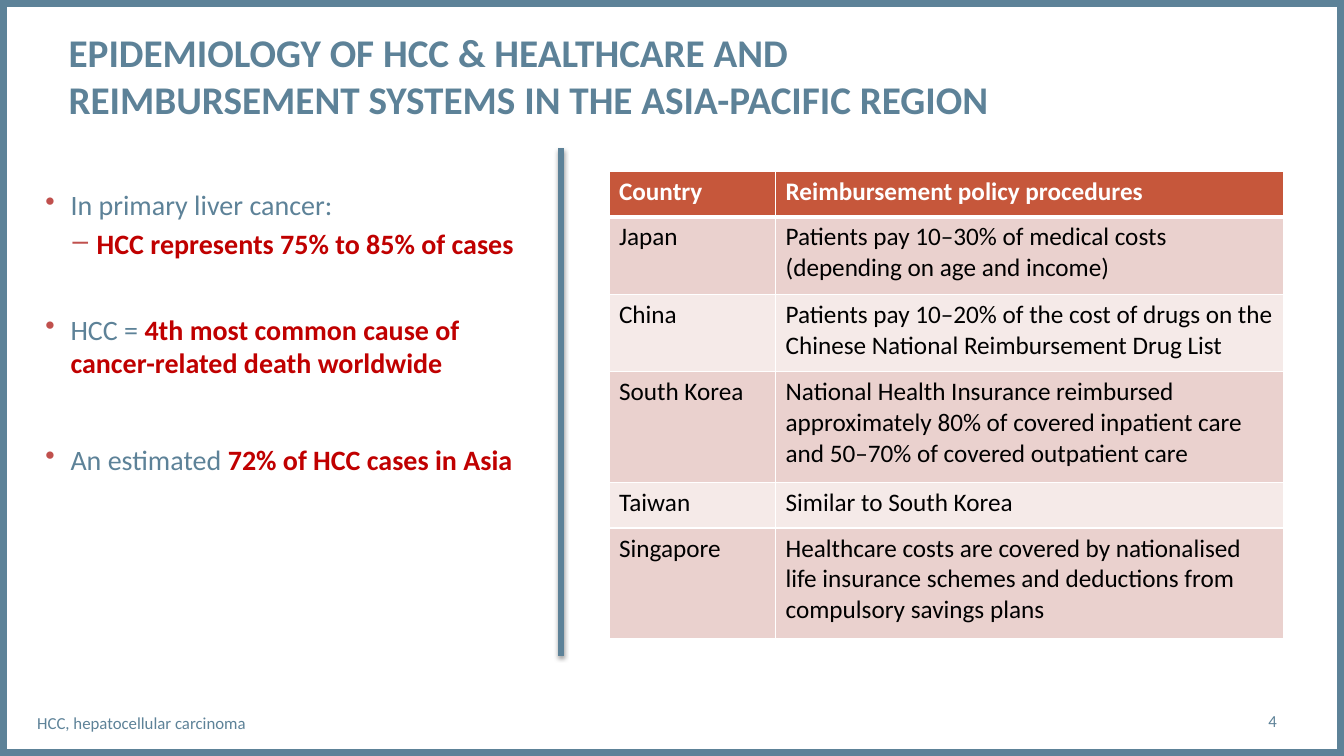
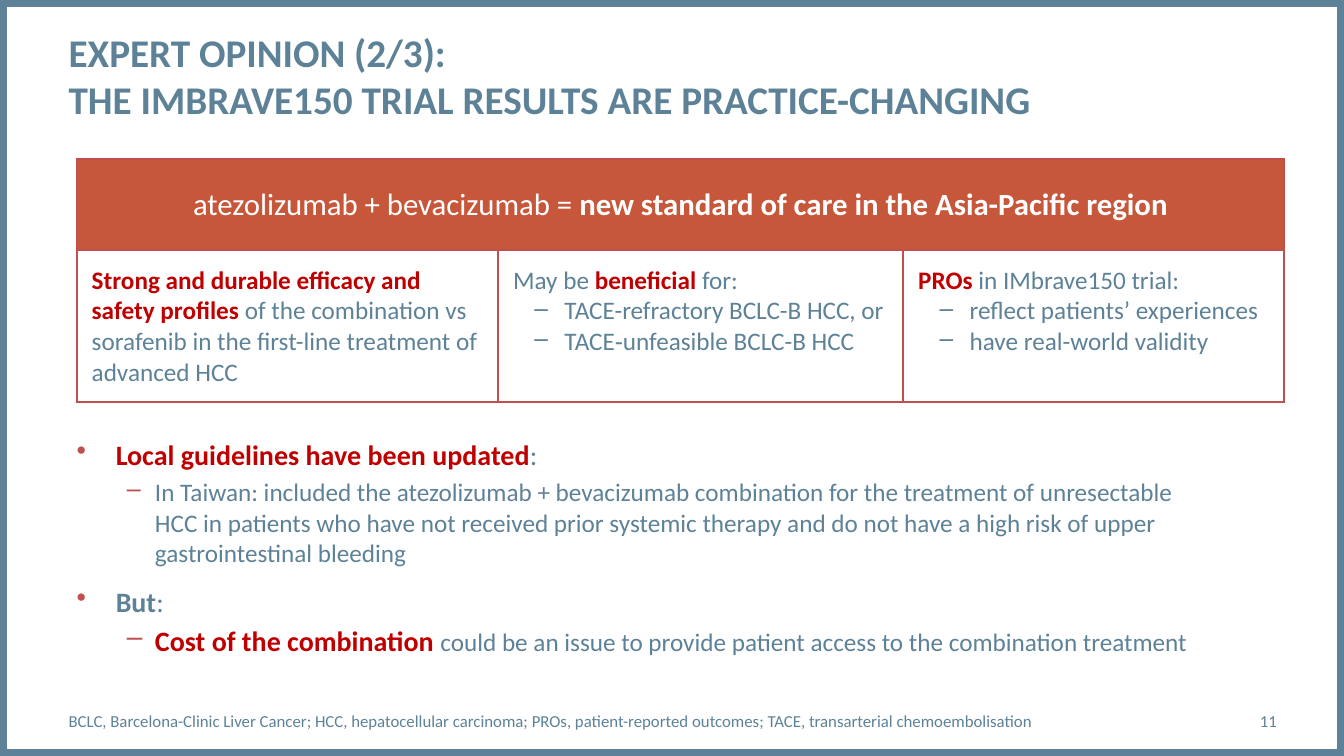
import pptx
import pptx.dml.color
import pptx.enum.shapes
import pptx.enum.text
import pptx.util
from lxml import etree
from pptx.oxml import ns

Pt = pptx.util.Pt
ALIGN = pptx.enum.text.PP_ALIGN
ANCHOR = pptx.enum.text.MSO_ANCHOR

FONT = "Calibri"
COLOURS = {
    "blue": "5D8298",
    "red": "C00000",
    "bullet": "C0504D",
    "header": "C6573B",
    "band_dark": "EAD1CE",
    "band_light": "F5EAE8",
    "white": "FFFFFF",
    "black": "000000",
}
# name: (character, left indent, hanging indent, level, bullet colour)
BULLETS = {
    "dot": ("•", 18, 18, 0, "bullet"),
    "dash": ("–", 36.7, 17.3, 1, "bullet"),
    "wide dot": ("•", 28, 28, 0, "bullet"),
    "wide dash": ("–", 56, 20, 1, "bullet"),
    "cell dash": ("‒", 36.7, 22.3, 1, "blue"),
}


def write(frame, lines, colour, bold=False, align=ALIGN.LEFT):
    """Fill a frame with lines of (bullet, size, space before, spans).

    A span is plain text, or (text, colour, size) for a bold stretch.
    """
    frame.word_wrap = True
    for index, (bullet, size, gap, spans) in enumerate(lines):
        para = frame.add_paragraph() if index else frame.paragraphs[0]
        para.alignment = align
        para.space_before = Pt(gap)
        if bullet:
            character, left, hanging, para.level, bullet_colour = BULLETS[bullet]
            properties = para._p.get_or_add_pPr()
            properties.set("marL", str(Pt(left)))
            properties.set("indent", str(-Pt(hanging)))
            tint = etree.SubElement(properties, ns.qn("a:buClr"))
            etree.SubElement(tint, ns.qn("a:srgbClr"), val=COLOURS[bullet_colour])
            etree.SubElement(properties, ns.qn("a:buChar"), char=character)
        para.font.name = FONT
        para.font.size = Pt(size)
        para.font.bold = bold
        para.font.color.rgb = pptx.dml.color.RGBColor.from_string(COLOURS[colour])
        for item in spans:
            strong = isinstance(item, tuple)
            text = item[0] if strong else item
            for number, piece in enumerate(text.split("\n")):
                if number:
                    para.add_line_break()
                span = para.add_run()
                span.text = piece
                if strong:
                    span.font.bold = True
                    span.font.size = Pt(item[2])
                    span.font.color.rgb = pptx.dml.color.RGBColor.from_string(COLOURS[item[1]])


def style_cell(cell, fill, border, widths):
    """Set the fill and the left, right, top and bottom borders of a cell."""
    properties = cell._tc.get_or_add_tcPr()
    for side, width in zip("LRTB", widths):
        line = etree.SubElement(properties, ns.qn("a:ln" + side), w=str(Pt(width)))
        solid = etree.SubElement(line, ns.qn("a:solidFill"))
        etree.SubElement(solid, ns.qn("a:srgbClr"), val=COLOURS[border])
    cell.fill.solid()
    cell.fill.fore_color.rgb = pptx.dml.color.RGBColor.from_string(COLOURS[fill])


deck = pptx.Presentation()
deck.slide_width, deck.slide_height = Pt(960), Pt(540)

PAGES = [
    {
        "title": "EPIDEMIOLOGY OF HCC & HEALTHCARE AND\n"
                 "REIMBURSEMENT SYSTEMS IN THE ASIA-PACIFIC REGION",
        "number": "4",
        "footer": "HCC, hepatocellular carcinoma",
        "footer_at": (26.6, 502, 649, 29),
        "body_at": (32.4, 134, 357, 272),
        "body": [
            ("dot", 20, 0, ["In primary liver cancer:"]),
            ("dash", 20, 4, [("HCC represents 75% to 85% of cases", "red", 20)]),
            ("dot", 20, 37, ["HCC = ", ("4th most common cause of cancer-related death worldwide", "red", 20)]),
            ("dot", 20, 45, ["An estimated ", ("72% of HCC cases in Asia", "red", 20)]),
        ],
        "table_at": (435, 122.4),
        "columns": [119, 363],
        "rows": [32.4, 55.4, 55.4, 79.2, 32.4, 79.2],
    },
    {
        "title": "EXPERT OPINION (2/3):\nTHE IMBRAVE150 TRIAL RESULTS ARE PRACTICE-CHANGING",
        "number": "11",
        "footer": "BCLC, Barcelona-Clinic Liver Cancer; HCC, hepatocellular carcinoma; "
                  "PROs, patient-reported outcomes; TACE, transarterial chemoembolisation",
        "footer_at": (49, 500.5, 743, 29),
        "body_at": (54.7, 312.5, 806, 173),
        "body": [
            ("wide dot", 20, 0, [("Local guidelines have been updated", "red", 20), ":"]),
            ("wide dash", 18, 4, [
                "In Taiwan: included the atezolizumab + bevacizumab combination for the treatment of "
                "unresectable HCC in patients who have not received prior systemic therapy and do not "
                "have a high risk of upper gastrointestinal bleeding"]),
            ("wide dot", 20, 12, [("But", "blue", 20), ":"]),
            ("wide dash", 18, 4, [
                ("Cost of the combination ", "red", 20),
                "could be an issue to provide patient access to the combination treatment"]),
        ],
        "table_at": (54.7, 113.8),
        "columns": [301, 289.4, 272.2],
        "rows": [64.8, 108.7],
    },
]

slides, tables = [], []
for page in PAGES:
    slide = deck.slides.add_slide(deck.slide_layouts[6])
    slides.append(slide)
    frame = slide.shapes.add_shape(
        pptx.enum.shapes.MSO_SHAPE.RECTANGLE, 0, 0, deck.slide_width, deck.slide_height)
    frame.shadow.inherit = False
    frame.fill.background()
    frame.line.width = Pt(10)
    frame.line.color.rgb = pptx.dml.color.RGBColor.from_string(COLOURS["blue"])

    boxes = [
        ((49, 20, 780, 68), ANCHOR.TOP, ALIGN.LEFT, True, [(None, 28, 0, [page["title"]])]),
        (page["body_at"], ANCHOR.TOP, ALIGN.LEFT, False, page["body"]),
        (page["footer_at"], ANCHOR.MIDDLE, ALIGN.LEFT, False, [(None, 12, 0, [page["footer"]])]),
        ((828, 500.5, 84, 29), ANCHOR.MIDDLE, ALIGN.RIGHT, False, [(None, 12, 0, [page["number"]])]),
    ]
    for place, anchor, align, bold, lines in boxes:
        text = slide.shapes.add_textbox(*map(Pt, place)).text_frame
        text.margin_left = text.margin_right = text.margin_top = text.margin_bottom = 0
        text.vertical_anchor = anchor
        write(text, lines, "blue", bold, align)

    columns, rows = page["columns"], page["rows"]
    table = slide.shapes.add_table(
        len(rows), len(columns), *map(Pt, page["table_at"]), Pt(sum(columns)), Pt(sum(rows))).table
    table.first_row = table.horz_banding = False
    for column, width in zip(table.columns, columns):
        column.width = Pt(width)
    for row, height in zip(table.rows, rows):
        row.height = Pt(height)
    tables.append(table)

# Reimbursement by country
POLICIES = [
    ("Country", "Reimbursement policy procedures"),
    ("Japan", "Patients pay 10–30% of medical costs\n(depending on age and income)"),
    ("China", "Patients pay 10–20% of the cost of drugs on the Chinese National Reimbursement Drug List"),
    ("South Korea", "National Health Insurance reimbursed approximately 80% of covered inpatient care "
                    "and 50–70% of covered outpatient care"),
    ("Taiwan", "Similar to South Korea"),
    ("Singapore", "Healthcare costs are covered by nationalised life insurance schemes and "
                  "deductions from compulsory savings plans"),
]
for row, policy in enumerate(POLICIES):
    header = row == 0
    fill = "header" if header else ("band_light", "band_dark")[row % 2]
    borders = (1, 1, 3 if row == 1 else 1, 3 if header else 1)
    for column, text in enumerate(policy):
        cell = tables[0].cell(row, column)
        style_cell(cell, fill, "white", borders)
        write(cell.text_frame, [(None, 18, 0, [text])], "white" if header else "black", header)

divider = slides[0].shapes.add_connector(
    pptx.enum.shapes.MSO_CONNECTOR.STRAIGHT, Pt(400.5), Pt(106), Pt(400.5), Pt(468.7))
divider.line.width = Pt(4.5)
divider.line.color.rgb = pptx.dml.color.RGBColor.from_string(COLOURS["blue"])
effects = etree.SubElement(divider._element.spPr, ns.qn("a:effectLst"))
shadow = etree.SubElement(
    effects, ns.qn("a:outerShdw"), blurRad=str(Pt(3.1)), dist=str(Pt(1.6)),
    dir="5400000", rotWithShape="0")
shade = etree.SubElement(shadow, ns.qn("a:srgbClr"), val=COLOURS["black"])
etree.SubElement(shade, ns.qn("a:alpha"), val="38000")

# Standard of care
ARGUMENTS = [
    [(None, 18, 0, [
        ("Strong and durable efficacy and safety profiles ", "red", 18),
        "of the combination vs sorafenib in the first-line treatment of advanced HCC"])],
    [(None, 18, 0, ["May be ", ("beneficial", "red", 18), " for:"]),
     ("cell dash", 18, 0, ["TACE-refractory BCLC-B HCC, or"]),
     ("cell dash", 18, 0, ["TACE‑unfeasible BCLC-B HCC"])],
    [(None, 18, 0, [("PROs", "red", 18), " in IMbrave150 trial:"]),
     ("cell dash", 18, 0, ["reflect patients’ experiences"]),
     ("cell dash", 18, 0, ["have real-world validity"])],
]
banner = tables[1].cell(0, 0)
banner.merge(tables[1].cell(0, 2))
banner.vertical_anchor = ANCHOR.MIDDLE
write(banner.text_frame, [(None, 22, 0, [
    "atezolizumab + bevacizumab = ",
    ("new standard of care in the Asia-Pacific region", "white", 22)])], "white", align=ALIGN.CENTER)
for column, lines in enumerate(ARGUMENTS):
    style_cell(tables[1].cell(0, column), "header", "bullet", [1.5] * 4)
    cell = tables[1].cell(1, column)
    style_cell(cell, "white", "bullet", [1.5] * 4)
    cell.margin_left = cell.margin_right = cell.margin_top = cell.margin_bottom = Pt(10.8)
    write(cell.text_frame, lines, "blue")

deck.save("out.pptx")
